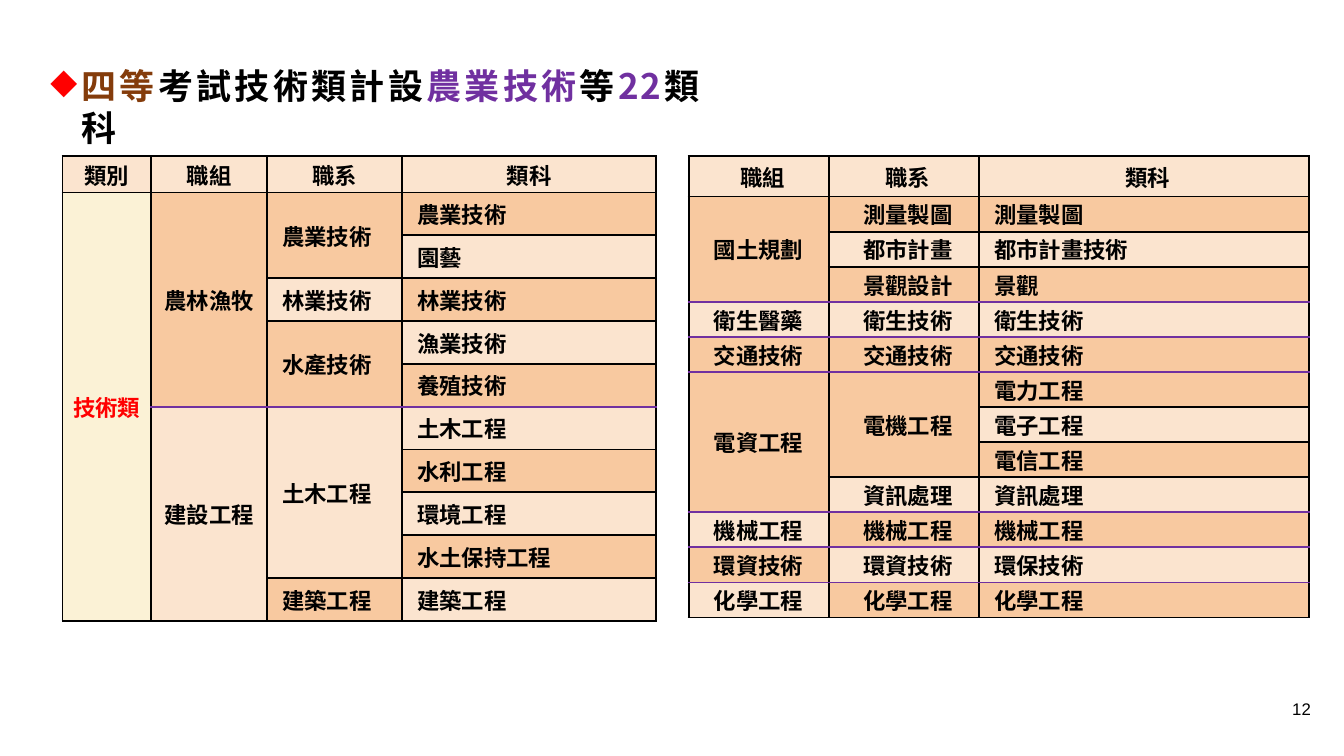
from dataclasses import dataclass

from lxml import etree
from pptx import Presentation
from pptx import util as u
from pptx.dml.color import RGBColor
from pptx.enum import text
from pptx.oxml import ns

PX = 9144
COLORS = {
    "black": "000000",
    "red": "FF0000",
    "brown": "843C0B",
    "purple": "7030A0",
    "cream": "FBF2D6",
    "light": "FBE4CF",
    "deep": "F8C9A0",
}
SHADES = {"C": "cream", "L": "light", "D": "deep"}
CJK_FONT = "Noto Sans CJK SC"
CENTER = text.PP_ALIGN.CENTER
JUSTIFY = text.PP_ALIGN.JUSTIFY


@dataclass(frozen=True)
class Column:
    heading: str
    width: int
    names: str
    spans: list[int]
    shades: str
    align: text.PP_ALIGN = CENTER
    indent: int = 0
    color: str = "black"


@dataclass(frozen=True)
class Grid:
    left: int
    top: int
    height: int
    header_height: int
    heading_indent: int
    group_column: int
    columns: list[Column]


AGRICULTURE = Grid(62, 155, 461, 36, 0, 1, [
    Column("類別", 88, "技術類", [10], "C", color="red"),
    Column("職組", 115, "農林漁牧 建設工程", [5, 5], "DL"),
    Column("職系", 134, "農業技術 林業技術 水產技術 土木工程 建築工程",
           [2, 1, 2, 4, 1], "DLDLD", JUSTIFY, 8),
    Column("類科", 252,
           "農業技術 園藝 林業技術 漁業技術 養殖技術 "
           "土木工程 水利工程 環境工程 水土保持工程 建築工程",
           [1] * 10, "DLDLDLDLDL", JUSTIFY, 8),
])
ENGINEERING = Grid(683, 155, 458, 40, 8, 0, [
    Column("職組", 139,
           "國土規劃 衛生醫藥 交通技術 電資工程 機械工程 環資技術 化學工程",
           [3, 1, 1, 4, 1, 1, 1], "DLDDLDL"),
    Column("職系", 149,
           "測量製圖 都市計畫 景觀設計 衛生技術 交通技術 "
           "電機工程 資訊處理 機械工程 環資技術 化學工程",
           [1, 1, 1, 1, 1, 3, 1, 1, 1, 1], "DLDLDDLDLD", indent=8),
    Column("類科", 327,
           "測量製圖 都市計畫技術 景觀 衛生技術 交通技術 電力工程 "
           "電子工程 電信工程 資訊處理 機械工程 環保技術 化學工程",
           [1] * 12, "DLDLDDLDLDLD", JUSTIFY, 8),
])
TITLE_SPANS = [
    ("四等", "brown"),
    ("考試技術類計設", "black"),
    ("農業技術", "purple"),
    ("等", "black"),
    ("22", "purple"),
    ("類科", "black"),
]


def rgb(color: str) -> RGBColor:
    return RGBColor.from_string(COLORS[color])


def add_color(parent, color: str) -> None:
    etree.SubElement(parent, ns.qn("a:srgbClr"), val=COLORS[color])


def set_font(para, size: int, bold: bool, name: str) -> None:
    para.font.size = u.Pt(size)
    para.font.bold = bold
    para.font.name = name
    properties = para.font._element
    etree.SubElement(properties, ns.qn("a:ea"), typeface=name)


def add_title(page) -> None:
    box = page.shapes.title
    box.left, box.top, box.width, box.height = (
        PX * length for length in (40, 59, 666, 52))
    frame = box.text_frame
    frame.word_wrap = True
    frame.auto_size = text.MSO_AUTO_SIZE.NONE
    frame.vertical_anchor = text.MSO_ANCHOR.TOP
    para = frame.paragraphs[0]
    para.alignment = JUSTIFY
    para.line_spacing = u.Pt(30)
    properties = para._p.get_or_add_pPr()
    properties.set("marL", str(31 * PX))
    properties.set("indent", str(-31 * PX))
    add_color(etree.SubElement(properties, ns.qn("a:buClr")), "red")
    etree.SubElement(properties, ns.qn("a:buChar"), char="◆")
    set_font(para, 25, True, CJK_FONT)
    para.font._element.set("spc", "150")
    for words, color in TITLE_SPANS:
        span = para.add_run()
        span.text = words
        span.font.color.rgb = rgb(color)


def format_cell(cell, top: str, bottom: str, shade: str) -> None:
    cell.margin_left = cell.margin_right = 7 * PX
    cell.margin_top = cell.margin_bottom = 0
    cell.vertical_anchor = text.MSO_ANCHOR.MIDDLE
    properties = cell._tc.get_or_add_tcPr()
    for side, color in zip("LRTB", ("black", "black", top, bottom)):
        line = etree.SubElement(properties, ns.qn(f"a:ln{side}"),
                                w=str(u.Pt(1.5)))
        add_color(etree.SubElement(line, ns.qn("a:solidFill")), color)
    cell.fill.solid()
    cell.fill.fore_color.rgb = rgb(shade)


def write_cell(cell, words: str, align: text.PP_ALIGN, indent: int,
               color: str) -> None:
    para = cell.text_frame.paragraphs[0]
    para.text = words
    para.alignment = align
    para._p.get_or_add_pPr().set("marL", str(indent * PX))
    set_font(para, 16, True, CJK_FONT)
    para.font.color.rgb = rgb(color)


def add_grid(page, grid: Grid) -> None:
    groups = grid.columns[grid.group_column].spans
    count = sum(groups)
    group_starts = {1 + sum(groups[:i]) for i in range(1, len(groups))}
    width = sum(column.width for column in grid.columns)
    table = page.shapes.add_table(
        count + 1, len(grid.columns), grid.left * PX, grid.top * PX,
        width * PX, grid.height * PX).table
    table.first_row = table.horz_banding = False
    table.rows[0].height = grid.header_height * PX
    for i in range(1, count + 1):
        table.rows[i].height = (grid.height - grid.header_height) * PX // count

    def edge(row: int) -> str:
        return "purple" if row in group_starts else "black"

    for number, column in enumerate(grid.columns):
        table.columns[number].width = column.width * PX
        heading = table.cell(0, number)
        format_cell(heading, "black", "black", "light")
        write_cell(heading, column.heading, CENTER, grid.heading_indent, "black")
        start = 1
        for name, size, shade in zip(column.names.split(), column.spans,
                                     column.shades):
            end = start + size
            for row in range(start, end):
                format_cell(table.cell(row, number), edge(start), edge(end),
                            SHADES[shade])
            cell = table.cell(start, number)
            if size > 1:
                cell.merge(table.cell(end - 1, number))
            write_cell(cell, name, column.align, column.indent, column.color)
            start = end


def add_page_number(page) -> None:
    box = page.shapes.add_textbox(1223 * PX, 683 * PX, 87 * PX, 40 * PX)
    frame = box.text_frame
    frame.word_wrap = True
    frame.vertical_anchor = text.MSO_ANCHOR.MIDDLE
    para = frame.paragraphs[0]
    para.text = "12"
    para.alignment = text.PP_ALIGN.RIGHT
    set_font(para, 12, False, "Arial")
    para.font.color.rgb = rgb("black")


def main() -> None:
    deck = Presentation()
    deck.slide_width = 1333 * PX
    deck.slide_height = 750 * PX
    page = deck.slides.add_slide(deck.slide_layouts[5])
    add_title(page)
    for grid in (AGRICULTURE, ENGINEERING):
        add_grid(page, grid)
    add_page_number(page)
    deck.save("out.pptx")


if __name__ == "__main__":
    main()
